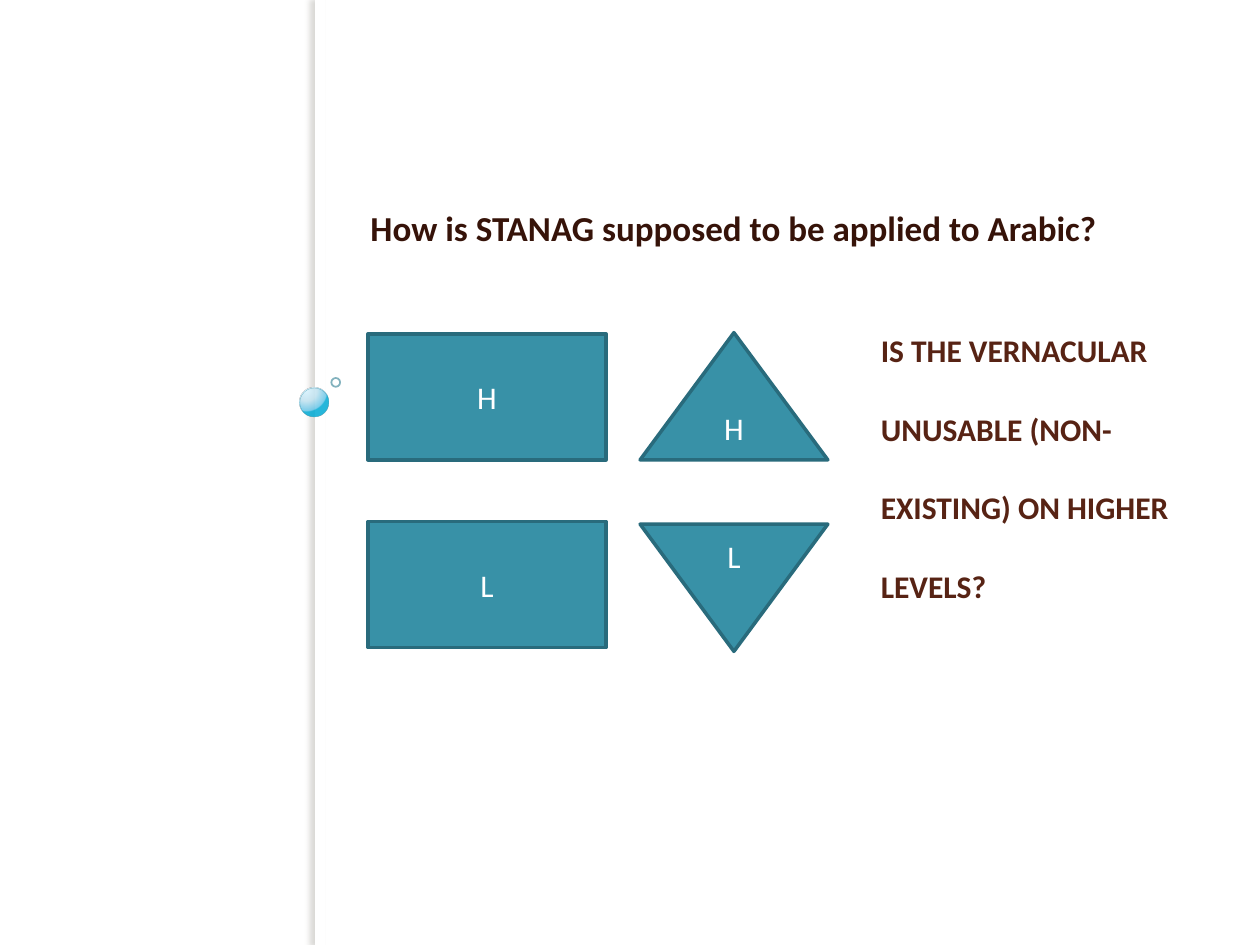
"""Build the slide on applying STANAG to Arabic."""
from lxml import etree
from pptx import Presentation
from pptx.dml.color import RGBColor
from pptx.enum import shapes, text
from pptx.oxml import ns
from pptx.util import Inches, Pt

KIND = shapes.MSO_SHAPE
WIDE, HIGH = 10, 7.5
WHITE = RGBColor(0xFF, 0xFF, 0xFF)
TEAL = RGBColor(0x38, 0x91, 0xA7)
EDGE = RGBColor(0x29, 0x6B, 0x7C)
BROWN = RGBColor(0x57, 0x23, 0x14)
DARK = RGBColor(0x36, 0x13, 0x09)
RIM = RGBColor(0x30, 0x8E, 0xA5)
RING = RGBColor(0x31, 0x80, 0x93)

TITLE = "IS THE VERNACULAR UNUSABLE (NON-EXISTING) ON HIGHER LEVELS?"
BODY = "How is STANAG supposed to be applied to Arabic?"
HOLDERS = [
    (TITLE, (6.89, 2.25, 2.93, 2.5), 18, BROWN, 45, text.MSO_ANCHOR.TOP),
    (BODY, (2.82, 1.17, 7, 0.85), 20, DARK, 23, text.MSO_ANCHOR.BOTTOM),
]
ROWS = ["H", "L"]
COLS = [
    (2.92, 2.65, 1.89, 1, 1.49, [KIND.RECTANGLE] * 2),
    (5.08, 2.64, 1.49, 1.01, 1.52,
     [KIND.FLOWCHART_EXTRACT, KIND.FLOWCHART_MERGE]),
]
STOPS = [(0, "DAF4FF", 95), (50, "C3E3F0", 90),
         (95, "6BC7E8", 88), (100, "00ABD5", 85)]
SPACE = ns.nsdecls("a")


def tint(hue, share):
    return f'<a:srgbClr val="{hue}"><a:alpha val="{share * 1000}"/></a:srgbClr>'


def style(part, **values):
    for name, value in values.items():
        setattr(part, name, value)


def draw(slide, kind, box, fill=None, line=None, width=1):
    shape = slide.shapes.add_shape(kind, *map(Inches, box))
    shape.shadow.inherit = False
    if fill is None:
        shape.fill.background()
    else:
        shape.fill.solid()
        shape.fill.fore_color.rgb = fill
    if line is None:
        shape.line.fill.background()
    else:
        shape.line.color.rgb = line
        shape.line.width = Pt(width)
    return shape


def write(shape, words, size, hue, bold, anchor):
    frame = shape.text_frame
    style(frame, text=words, word_wrap=True, vertical_anchor=anchor,
          auto_size=text.MSO_AUTO_SIZE.NONE)
    para = frame.paragraphs[0]
    style(para.runs[0].font, name="Calibri", size=Pt(size), bold=bold)
    para.runs[0].font.color.rgb = hue
    return para


def fade(shape):
    for clr in shape.line._ln.iter(ns.qn("a:srgbClr")):
        etree.SubElement(clr, ns.qn("a:alpha"), val="60000")


def trim(slide):
    bar = draw(slide, KIND.RECTANGLE, (WIDE / 4, 0, 0.08, HIGH), WHITE)
    glow = etree.fromstring(
        f'<a:outerShdw {SPACE} blurRad="{Pt(3)}" dist="{Pt(3)}" dir="10800000"'
        f' algn="tl" rotWithShape="0">{tint("736F63", 25)}</a:outerShdw>')
    bar._element.spPr.find(ns.qn("a:effectLst")).append(glow)

    ball = draw(slide, KIND.OVAL, (2.38, 3.08, 0.23, 0.23), WHITE, RIM, 0.16)
    stops = "".join(f'<a:gs pos="{at * 1000}">{tint(hue, share)}</a:gs>'
                    for at, hue, share in STOPS)
    blend = etree.fromstring(
        f'<a:gradFill {SPACE} rotWithShape="1"><a:gsLst>{stops}</a:gsLst>'
        '<a:path path="circle"><a:fillToRect l="25000" t="12000" r="75000"'
        ' b="88000"/></a:path></a:gradFill>')
    props = ball._element.spPr
    props.replace(props.find(ns.qn("a:solidFill")), blend)
    ring = draw(slide, KIND.OVAL, (2.63, 3, 0.07, 0.07), None, RING)
    for dot in (ball, ring):
        fade(dot)


def main():
    deck = Presentation()
    style(deck, slide_width=Inches(WIDE), slide_height=Inches(HIGH))
    slide = deck.slides.add_slide(deck.slide_layouts[2])
    for holder, item in zip(slide.placeholders, HOLDERS):
        words, box, size, hue, pitch, anchor = item
        sides = zip(("left", "top", "width", "height"), map(Inches, box))
        style(holder, **dict(sides))
        para = write(holder, words, size, hue, True, anchor)
        style(para, line_spacing=Pt(pitch), space_before=Pt(0),
              alignment=text.PP_ALIGN.LEFT)
    para._p.get_or_add_pPr().set("marL", str(Inches(0.02)))
    trim(slide)
    for left, top, wide, high, step, kinds in COLS:
        for row, (word, kind) in enumerate(zip(ROWS, kinds)):
            box = (left, top + row * step, wide, high)
            shape = draw(slide, kind, box, TEAL, EDGE, 2)
            para = write(shape, word, 18, WHITE, False, text.MSO_ANCHOR.MIDDLE)
            para.alignment = text.PP_ALIGN.CENTER
    deck.save("out.pptx")


if __name__ == "__main__":
    main()
